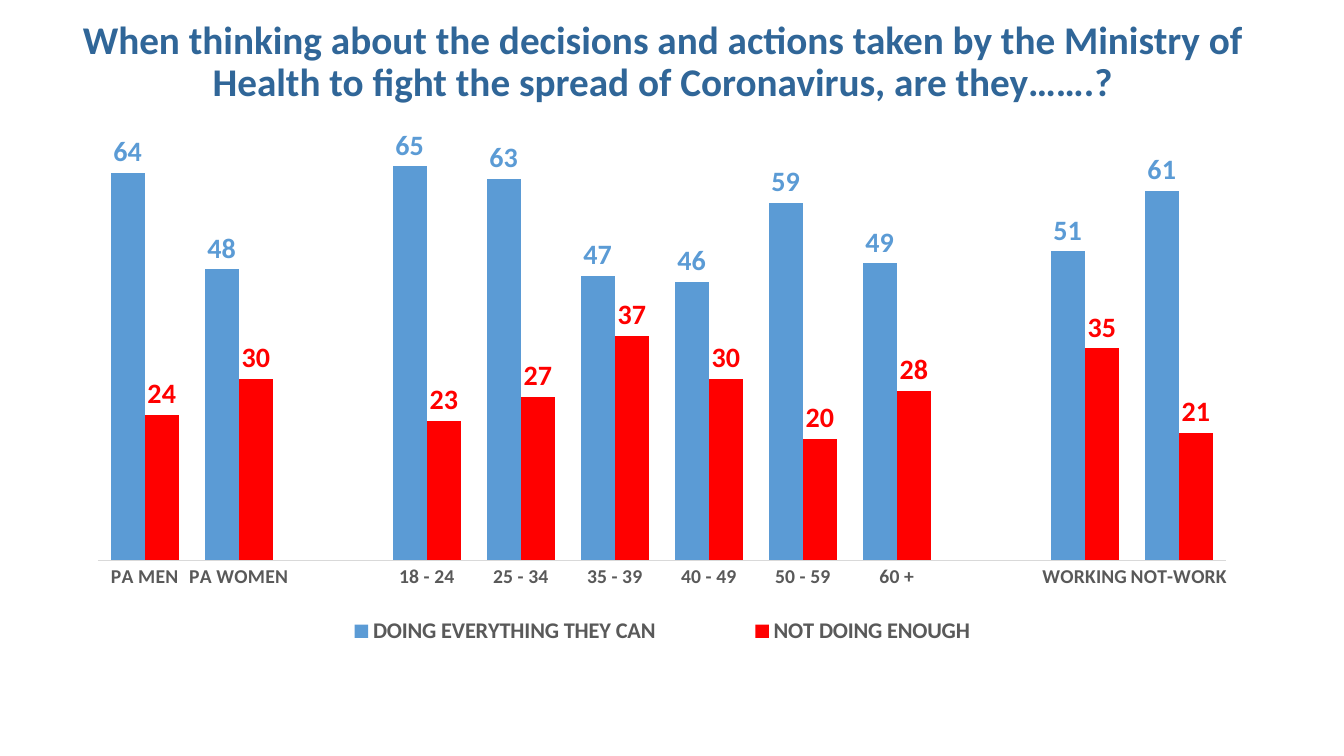
from dataclasses import dataclass

from lxml.etree import SubElement
from pptx import Presentation
from pptx.chart.chart import Chart
from pptx.chart.data import CategoryChartData
from pptx.dml.color import RGBColor
from pptx.enum.chart import XL_CHART_TYPE, XL_LABEL_POSITION, XL_LEGEND_POSITION, XL_TICK_MARK
from pptx.enum.text import MSO_ANCHOR, PP_ALIGN
from pptx.oxml.ns import qn
from pptx.slide import Slide
from pptx.text.text import Font
from pptx.util import Pt

PX = 9144  # EMU per px, 100 px to the inch
FONT = "Calibri"
TITLE_BLUE = RGBColor(0x30, 0x66, 0x98)
BAR_BLUE = RGBColor(0x5B, 0x9B, 0xD5)
BAR_RED = RGBColor(0xFF, 0x00, 0x00)
TEXT_GREY = RGBColor(0x59, 0x59, 0x59)
LINE_GREY = RGBColor(0xD9, 0xD9, 0xD9)

TITLE = (
    "When thinking about the decisions and actions taken by the Ministry of "
    "Health to fight the spread of Coronavirus, are they…….?"
)


@dataclass(frozen=True)
class Box:
    left: int
    top: int
    width: int
    height: int

    def emu(self) -> tuple[int, ...]:
        return tuple(px * PX for px in (self.left, self.top, self.width, self.height))


@dataclass(frozen=True)
class Answer:
    name: str
    color: RGBColor
    values: tuple[int | None, ...]


# Empty categories separate gender, age and work groups
GROUPS = (
    "PA MEN", "PA WOMEN", "",
    "18 - 24", "25 - 34", "35 - 39", "40 - 49", "50 - 59", "60 +", "",
    "WORKING", "NOT-WORK",
)
ANSWERS = (
    Answer("DOING EVERYTHING THEY CAN", BAR_BLUE,
           (64, 48, None, 65, 63, 47, 46, 59, 49, None, 51, 61)),
    Answer("NOT DOING ENOUGH", BAR_RED,
           (24, 30, None, 23, 27, 37, 30, 20, 28, None, 35, 21)),
)


def style_font(font: Font, size: int, color: RGBColor) -> None:
    font.name = FONT
    font.size = Pt(size)
    font.bold = True
    font.color.rgb = color


def set_layout(element, x: float, y: float, w: float, h: float, inner: bool = False) -> None:
    """Place a chart part by fractions of the chart's size."""
    layout = element.get_or_add_layout() if hasattr(element, "get_or_add_layout") else None
    if layout is None:
        layout = element.find(qn("c:layout"))
    if layout is None:
        layout = SubElement(element, qn("c:layout"))
        element.insert(0, layout)
    for child in list(layout):
        layout.remove(child)
    manual = SubElement(layout, qn("c:manualLayout"))
    settings = [("layoutTarget", "inner")] if inner else []
    settings += [("xMode", "edge"), ("yMode", "edge"), ("x", x), ("y", y), ("w", w), ("h", h)]
    for tag, value in settings:
        SubElement(manual, qn(f"c:{tag}")).set("val", str(value))


def add_title(slide: Slide, box: Box) -> None:
    frame = slide.shapes.add_textbox(*box.emu()).text_frame
    frame.word_wrap = True
    frame.vertical_anchor = MSO_ANCHOR.MIDDLE
    paragraph = frame.paragraphs[0]
    paragraph.text = TITLE
    paragraph.alignment = PP_ALIGN.CENTER
    paragraph.line_spacing = 0.9
    style_font(paragraph.font, 28, TITLE_BLUE)


def style_axes(chart: Chart) -> None:
    value_axis = chart.value_axis
    value_axis.visible = False
    value_axis.has_major_gridlines = False
    value_axis.minimum_scale = 0
    value_axis.maximum_scale = 70
    category_axis = chart.category_axis
    category_axis.major_tick_mark = XL_TICK_MARK.NONE
    category_axis.format.line.color.rgb = LINE_GREY
    category_axis.format.line.width = Pt(0.75)
    style_font(category_axis.tick_labels.font, 14, TEXT_GREY)


def add_answer_chart(slide: Slide, box: Box) -> None:
    data = CategoryChartData()
    data.categories = GROUPS
    for answer in ANSWERS:
        data.add_series(answer.name, answer.values)
    chart = slide.shapes.add_chart(XL_CHART_TYPE.COLUMN_CLUSTERED, *box.emu(), data).chart
    chart.has_title = False
    chart.font.name = FONT
    chart.font.size = Pt(10)
    style_axes(chart)

    # Columns and their value labels
    plot = chart.plots[0]
    plot.gap_width = 75
    plot.overlap = 0
    plot.vary_by_categories = False
    for series, answer in zip(plot.series, ANSWERS):
        series.format.fill.solid()
        series.format.fill.fore_color.rgb = answer.color
        series.invert_if_negative = False
        labels = series.data_labels
        labels.show_value = True
        labels.position = XL_LABEL_POSITION.OUTSIDE_END
        style_font(labels.font, 20, answer.color)

    # Legend below the plot
    chart.has_legend = True
    legend = chart.legend
    legend.position = XL_LEGEND_POSITION.BOTTOM
    legend.include_in_layout = False
    style_font(legend.font, 16, TEXT_GREY)

    plot_area = chart.element.find(f".//{qn('c:plotArea')}")
    set_layout(plot_area, 0.013, 0.052, 0.973, 0.778, inner=True)
    legend_element = chart.element.find(f".//{qn('c:legend')}")
    if legend_element.find(qn("c:layout")) is None:
        position = legend_element.find(qn("c:legendPos"))
        layout = SubElement(legend_element, qn("c:layout"))
        position.addnext(layout)
    set_layout(legend_element, 0.155, 0.92, 0.69, 0.08)


def main() -> None:
    presentation = Presentation()
    presentation.slide_width = 1333 * PX
    presentation.slide_height = 750 * PX
    slide = presentation.slides.add_slide(presentation.slide_layouts[6])
    add_title(slide, Box(72, 18, 1170, 89))
    add_answer_chart(slide, Box(82, 107, 1150, 541))
    presentation.save("out.pptx")


if __name__ == "__main__":
    main()
